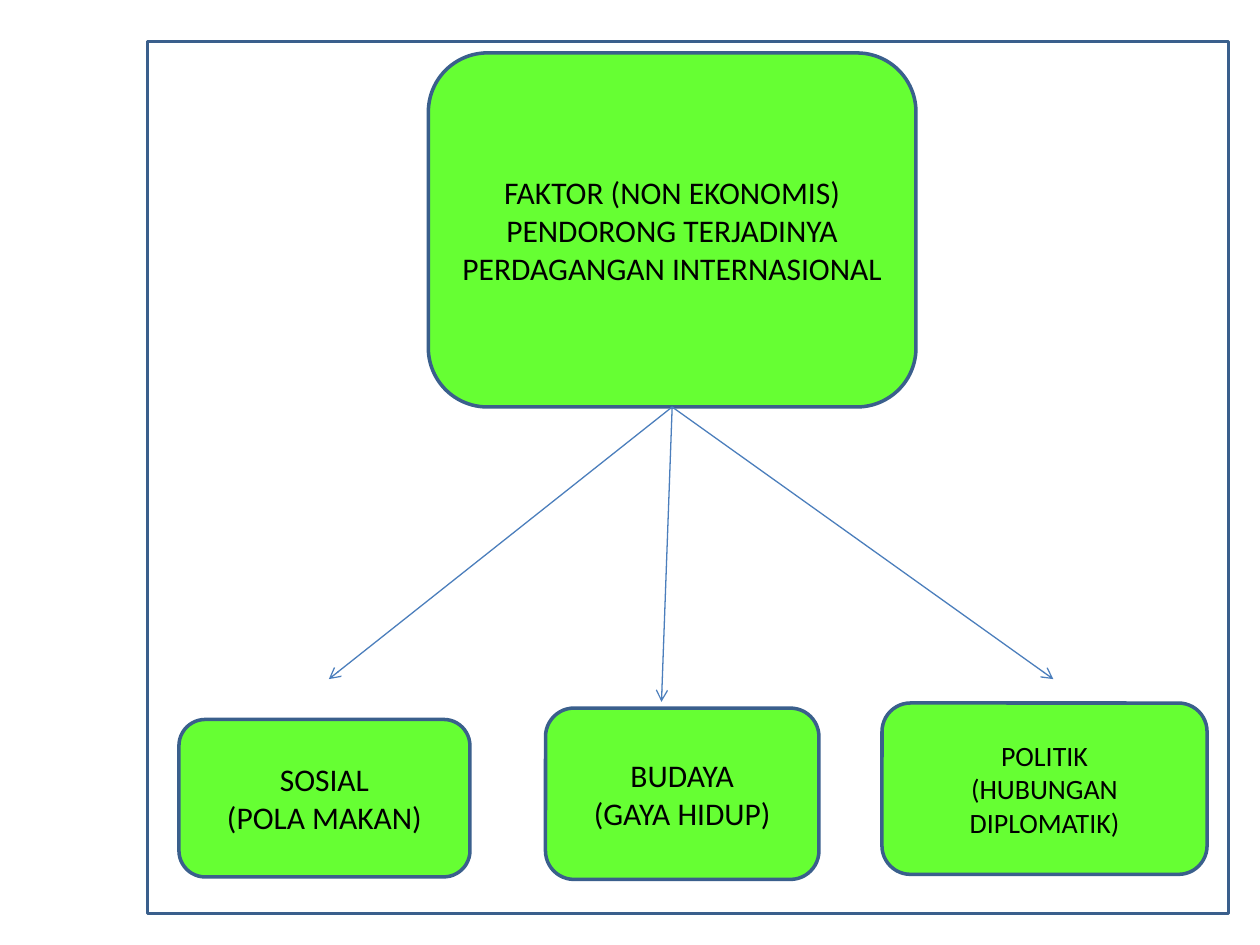
from lxml import etree
from pptx import Presentation
from pptx.dml.color import RGBColor
from pptx.enum import shapes, text
from pptx.oxml import ns
from pptx.util import Inches, Pt

WHITE = RGBColor(0xFF, 0xFF, 0xFF)
BLACK = RGBColor(0, 0, 0)
GREEN = RGBColor(0x66, 0xFF, 0x33)
BORDER = RGBColor(0x3A, 0x5F, 0x8C)
ARROW = RGBColor(0x4B, 0x7E, 0xBC)

FRAME = (1.17, 0.33, 8.58, 6.92)
TITLE = (3.4, 0.42, 3.87, 2.81)
TITLE_LINES = ["FAKTOR (NON EKONOMIS)",
               "PENDORONG TERJADINYA PERDAGANGAN INTERNASIONAL"]
# Box, lines, text size, arrow tip
FACTORS = [
    ((1.42, 5.71, 2.31, 1.25), ["SOSIAL", "(POLA MAKAN)"], 18, (2.61, 5.39)),
    ((4.33, 5.62, 2.17, 1.36), ["BUDAYA", "(GAYA HIDUP)"], 18, (5.25, 5.57)),
    ((7, 5.58, 2.58, 1.36), ["POLITIK", "(HUBUNGAN DIPLOMATIK)"], 16, (8.36, 5.39)),
]


def add_outlined(s, kind, box, fill):
    sp = s.shapes.add_shape(kind, *map(Inches, box))
    sp.shadow.inherit = False
    sp.fill.solid()
    sp.fill.fore_color.rgb = fill
    sp.line.color.rgb = BORDER
    sp.line.width = Pt(2)
    return sp


def add_frame(s, box):
    sp = add_outlined(s, shapes.MSO_SHAPE.RECTANGLE, box, WHITE)
    # Translucent fill
    color = sp.fill._xPr.find(".//" + ns.qn("a:srgbClr"))
    etree.SubElement(color, ns.qn("a:alpha"), val="46000")


def add_node(s, box, lines, size):
    sp = add_outlined(s, shapes.MSO_SHAPE.ROUNDED_RECTANGLE, box, GREEN)
    tf = sp.text_frame
    tf.word_wrap = True
    tf.vertical_anchor = text.MSO_ANCHOR.MIDDLE
    for i, line in enumerate(lines):
        p = tf.add_paragraph() if i else tf.paragraphs[0]
        p.alignment = text.PP_ALIGN.CENTER
        r = p.add_run()
        r.text = line
        r.font.name = "Calibri"
        r.font.size = Pt(size)
        r.font.color.rgb = BLACK
    return sp


def add_arrow(s, source, tip):
    x, y = map(Inches, tip)
    start = source.left + source.width // 2, source.top + source.height
    c = s.shapes.add_connector(shapes.MSO_CONNECTOR.STRAIGHT, *start, x, y)
    c.begin_connect(source, 2)
    c.line.color.rgb = ARROW
    c.line.width = Pt(0.75)
    etree.SubElement(c.line._get_or_add_ln(), ns.qn("a:tailEnd"), type="arrow")
    etree.SubElement(c._element.spPr, ns.qn("a:effectLst"))


def add_diagram(s):
    title = add_node(s, TITLE, TITLE_LINES, 18)
    for box, lines, size, _ in FACTORS:
        add_node(s, box, lines, size)
    for *_, tip in FACTORS:
        add_arrow(s, title, tip)


def main():
    prs = Presentation()
    prs.slide_width, prs.slide_height = Inches(10), Inches(7.5)
    s = prs.slides.add_slide(prs.slide_layouts[6])
    add_frame(s, FRAME)
    add_diagram(s)
    prs.save("out.pptx")


if __name__ == "__main__":
    main()
